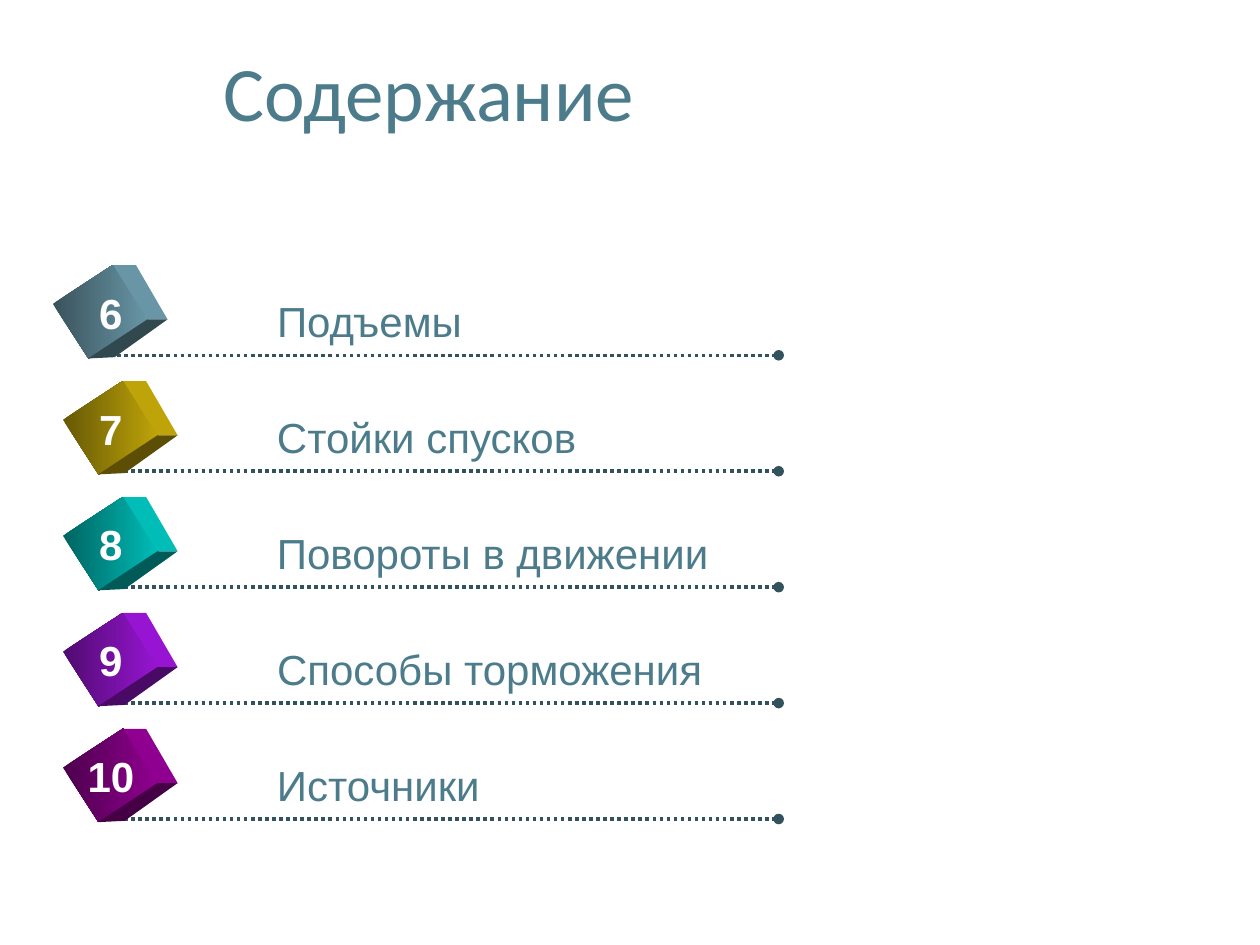
from lxml.etree import SubElement
from pptx import Presentation
from pptx.dml.color import RGBColor
from pptx.enum.dml import MSO_LINE
from pptx.enum.shapes import MSO_CONNECTOR, MSO_SHAPE
from pptx.enum.text import MSO_ANCHOR, MSO_AUTO_SIZE, PP_ALIGN
from pptx.oxml.ns import qn
from pptx.util import Inches, Pt


def color(hex_value):
    return RGBColor.from_string(hex_value)


def write(frame, text, font_name, size, hex_value, align, bold=False):
    paragraph = frame.paragraphs[0]
    paragraph.alignment = align
    run = paragraph.add_run()
    run.text = text
    run.font.name = font_name
    run.font.size = Pt(size)
    run.font.bold = bold
    run.font.color.rgb = color(hex_value)


presentation = Presentation()
presentation.slide_width = Inches(10)
presentation.slide_height = Inches(7.5)
slide = presentation.slides.add_slide(presentation.slide_layouts[5])
shapes = slide.shapes

# Title
title = shapes.title
title.left, title.top = Inches(0.15), Inches(0.05)
title.width, title.height = Inches(6.51), Inches(1.34)
title.text_frame.vertical_anchor = MSO_ANCHOR.MIDDLE
write(title.text_frame, "Содержание", "Calibri", 44, "4C7C8B", PP_ALIGN.CENTER)

# Grid: one dotted rule per row, with cube, number and label above it
FIRST_RULE, ROW = 2.82, 0.92
RULE_LEFT, RULE_RIGHT = 0.93, 6.18
CUBE_WIDTH, CUBE_HEIGHT = 0.52, 0.57
NUMBER_CENTER, LABEL_LEFT, TEXT_HEIGHT = 0.88, 2.1, 0.5

# Side faces, measured from the centre of the front face
RIGHT_FACE = [(0.1, -0.37), (0.28, -0.37), (0.53, 0.06), (0.37, 0.06)]
BOTTOM_FACE = [(0.37, 0.06), (0.53, 0.06), (0.11, 0.36), (-0.1, 0.37)]

# number, topic, label width, cube left, light, front shade, underside
topics = [
    ("6", "Подъемы", 1.68, 0.54, "6896A6", "3A535C", "32484F"),
    ("7", "Стойки спусков", 2.6, 0.62, "BFA409", "665805", "5C4F05"),
    ("8", "Повороты в движении", 3.66, 0.62, "00BDB8", "006461", "005A58"),
    ("9", "Способы торможения", 3.61, 0.62, "9715D2", "500B70", "480A65"),
    ("10", "Источники", 1.83, 0.62, "900090", "4D004D", "450045"),
]

for row, (number, topic, label_width, cube_left, light, shade, under) in enumerate(topics):
    rule_y = FIRST_RULE + row * ROW
    cube_top = rule_y - 0.63

    # Dotted rule with a round end
    rule = shapes.add_connector(MSO_CONNECTOR.STRAIGHT, Inches(RULE_LEFT), Inches(rule_y),
                                Inches(RULE_RIGHT), Inches(rule_y))
    rule.line.color.rgb = color("32525D")
    rule.line.width = Pt(2)
    rule.line.dash_style = MSO_LINE.ROUND_DOT
    SubElement(rule.line._get_or_add_ln(), qn("a:tailEnd"), type="oval")
    SubElement(rule._element.spPr, qn("a:effectLst"))

    # Cube: shaded front, then the two side faces
    front = shapes.add_shape(MSO_SHAPE.RECTANGLE, Inches(cube_left), Inches(cube_top),
                             Inches(CUBE_WIDTH), Inches(CUBE_HEIGHT))
    front.rotation = 57
    front.shadow.inherit = False
    front.line.fill.background()
    front.fill.gradient()
    front.fill.gradient_angle = 57
    for stop, stop_color in zip(front.fill.gradient_stops, (shade, light)):
        stop.color.rgb = color(stop_color)

    center_x = cube_left + CUBE_WIDTH / 2
    center_y = cube_top + CUBE_HEIGHT / 2
    for corners, face_color in ((RIGHT_FACE, light), (BOTTOM_FACE, under)):
        points = [(Inches(center_x + x), Inches(center_y + y)) for x, y in corners]
        outline = shapes.build_freeform(*points[0])
        outline.add_line_segments(points[1:], close=True)
        face = outline.convert_to_shape()
        face.shadow.inherit = False
        face.line.fill.background()
        face.fill.solid()
        face.fill.fore_color.rgb = color(face_color)

    # Number and topic
    number_width = 0.2 + 0.19 * len(number)
    for text, left, top, width, text_color, align, bold in (
        (number, NUMBER_CENTER - number_width / 2, rule_y - 0.59, number_width,
         "FFFFFF", PP_ALIGN.CENTER, True),
        (topic, LABEL_LEFT, rule_y - 0.52, label_width, "4C7C8B", PP_ALIGN.LEFT, False),
    ):
        box = shapes.add_textbox(Inches(left), Inches(top), Inches(width), Inches(TEXT_HEIGHT))
        box.text_frame.word_wrap = False
        box.text_frame.auto_size = MSO_AUTO_SIZE.SHAPE_TO_FIT_TEXT
        write(box.text_frame, text, "Arial", 24, text_color, align, bold)

presentation.save("out.pptx")
